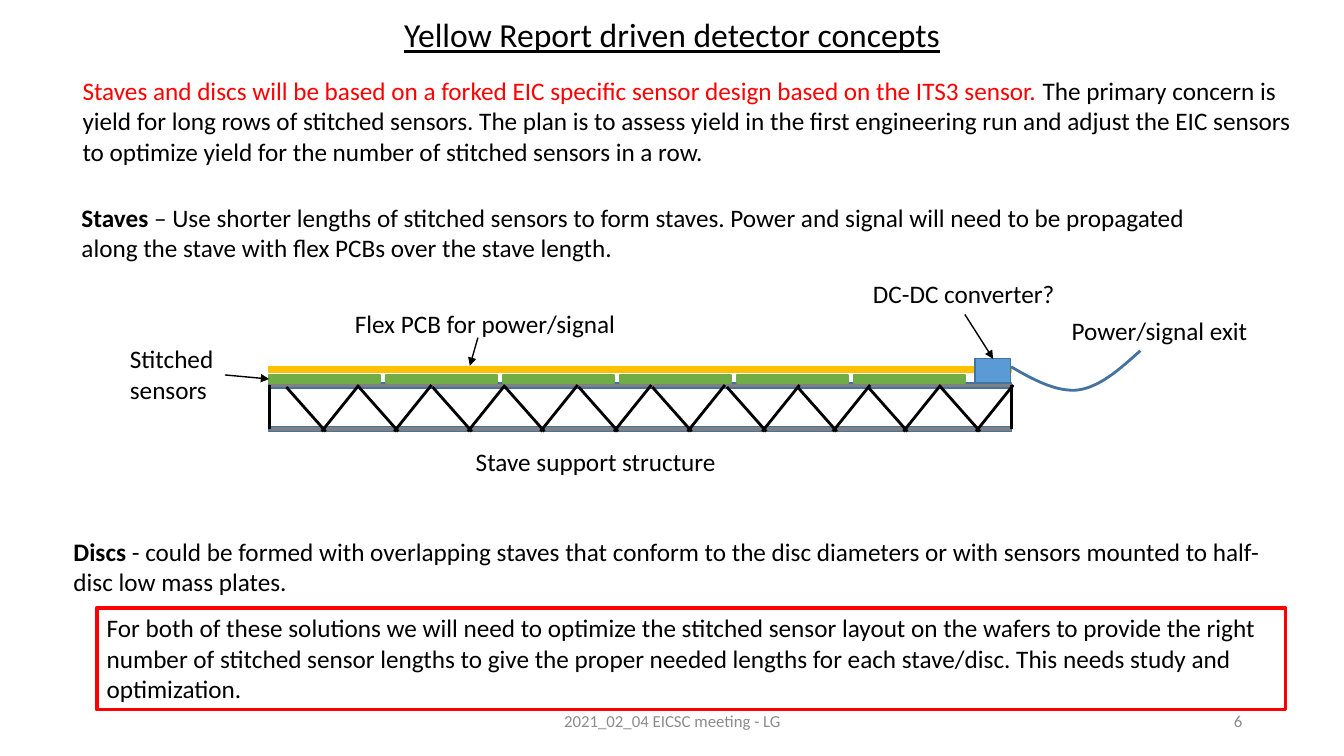
from lxml import etree
from pptx import Presentation
from pptx.dml.color import RGBColor
from pptx.enum.shapes import MSO_CONNECTOR, MSO_SHAPE
from pptx.enum.text import MSO_ANCHOR, MSO_AUTO_SIZE, PP_ALIGN
from pptx.oxml.ns import qn
from pptx.util import Inches, Pt

STRAIGHT, RECT = MSO_CONNECTOR.STRAIGHT, MSO_SHAPE.RECTANGLE
TOP, MIDDLE = MSO_ANCHOR.TOP, MSO_ANCHOR.MIDDLE
LEFT, CENTER, RIGHT = PP_ALIGN.LEFT, PP_ALIGN.CENTER, PP_ALIGN.RIGHT
BLACK = RGBColor(0x00, 0x00, 0x00)
RED = RGBColor(0xFF, 0x00, 0x00)
GRAY = RGBColor(0x80, 0x80, 0x80)
FOOTER_GRAY = RGBColor(0x8C, 0x8C, 0x8C)
BLUE = RGBColor(0x5B, 0x9B, 0xD5)
DARK_BLUE = RGBColor(0x43, 0x73, 0x9E)
GREEN = RGBColor(0x70, 0xAD, 0x47)
GOLD = RGBColor(0xFF, 0xC0, 0x00)

prs = Presentation()
prs.slide_width, prs.slide_height = Inches(13.33), Inches(7.5)
s = prs.slides.add_slide(prs.slide_layouts[5])


def write(sp, paragraphs, size=18, align=LEFT, anchor=TOP, wrap=True):
    """Fill a shape with paragraphs, each a list of (text, font values) runs."""
    tf = sp.text_frame
    tf.word_wrap, tf.vertical_anchor = wrap, anchor
    tf.auto_size = MSO_AUTO_SIZE.NONE
    for i, runs in enumerate(paragraphs):
        p = tf.paragraphs[0] if i == 0 else tf.add_paragraph()
        p.alignment = align
        for text, values in runs:
            r = p.add_run()
            r.text = text
            r.font.name, r.font.size = "Calibri", Pt(size)
            r.font.color.rgb = values.get("color", BLACK)
            for name in ("bold", "underline"):
                if name in values:
                    setattr(r.font, name, values[name])


def add_line(x1, y1, x2, y2, width=2, arrow=False):
    line = s.shapes.add_connector(STRAIGHT, *map(Inches, (x1, y1, x2, y2)))
    line.line.color.rgb, line.line.width = BLACK, Pt(width)
    sp_pr = line._element.spPr
    if arrow:
        etree.SubElement(sp_pr.find(qn("a:ln")), qn("a:tailEnd"), type="triangle")
    etree.SubElement(sp_pr, qn("a:effectLst"))


# Title
title = s.shapes.title
title.left, title.top, title.width, title.height = map(Inches, (3.88, 0.09, 5.57, 0.5))
write(title, [[("Yellow Report driven detector concepts", {"underline": True})]],
      size=24, align=CENTER, wrap=False)

# Body text
body = [
    ((0.72, 0.7, 12.28, 1.01), [
        ("Staves and discs will be based on a forked EIC specific sensor design "
         "based on the ITS3 sensor. ", {"color": RED}),
        ("The primary concern is yield for long rows of stitched sensors. The plan is to "
         "assess yield in the first engineering run and adjust the EIC sensors to optimize "
         "yield for the number of stitched sensors in a row.", {})]),
    ((0.71, 1.96, 11.7, 0.71), [
        ("Staves", {"bold": True}),
        (" – Use shorter lengths of stitched sensors to form staves. Power and signal will "
         "need to be propagated along the stave with flex PCBs over the stave length.", {})]),
    ((0.63, 5.27, 12.35, 1.01), [
        ("Discs", {"bold": True}),
        (" - could be formed with overlapping staves that conform to the disc diameters "
         "or with sensors mounted to half-disc low mass plates.", {})]),
]
for box, runs in body:
    write(s.shapes.add_textbox(*map(Inches, box)), [runs])

# Stave: rails, sensors, flex PCB and converter
STAVE_X, STAVE_W = 2.67, 7.36
STAVE_END = STAVE_X + STAVE_W
bars = [(STAVE_X, y, STAVE_W, 0.05, GRAY, DARK_BLUE) for y in (3.8, 4.23)]
bars += [(STAVE_X + 1.16 * i, 3.72, 1.1, 0.08, GREEN, GREEN) for i in range(6)]
bars += [(STAVE_X, 3.64, STAVE_W, 0.05, GOLD, GOLD),
         (9.67, 3.56, 0.35, 0.24, BLUE, DARK_BLUE)]
for x, y, w, h, fill, outline in bars:
    sp = s.shapes.add_shape(RECT, *map(Inches, (x, y, w, h)))
    sp.shadow.inherit = False
    sp.fill.solid()
    sp.fill.fore_color.rgb = fill
    sp.line.color.rgb, sp.line.width = outline, Pt(1)

# Truss: end posts and one V of struts to the left of each peak
for x in (STAVE_X, STAVE_END):
    add_line(x, 3.82, x, 4.26)
for peak in (3.56, 4.28, 5.01, 5.73, 6.46, 7.19, 7.93, 8.63, 9.33, 10.05):
    add_line(peak, 3.82, peak - 0.37, 4.28)
    add_line(peak - 0.72, 3.84, peak - 0.33, 4.28)

# Cable leaving the stave, sampled along two cubic curves
curves = [((10.03, 3.64), (10.25, 3.77), (10.48, 3.89), (10.69, 3.87)),
          ((10.69, 3.87), (10.91, 3.84), (11.11, 3.66), (11.31, 3.48))]
STEPS = 16
points = []
for curve in curves:
    for step in range(1, STEPS + 1):
        t = step / STEPS
        weights = ((1 - t) ** 3, 3 * t * (1 - t) ** 2, 3 * t ** 2 * (1 - t), t ** 3)
        points.append([Inches(sum(w * pt[axis] for w, pt in zip(weights, curve)))
                       for axis in (0, 1)])
builder = s.shapes.build_freeform(*map(Inches, curves[0][0]))
builder.add_line_segments(points, close=False)
cable = builder.convert_to_shape()
cable.shadow.inherit = False
cable.fill.background()
cable.line.color.rgb, cable.line.width = DARK_BLUE, Pt(2)

# Labels and their arrows
labels = [
    ((3.42, 3.01, 2.81, 0.4), ["Flex PCB for power/signal"]),
    ((1.19, 3.36, 1.04, 0.71), ["Stitched", "sensors"]),
    ((4.62, 4.38, 2.61, 0.4), ["Stave support structure"]),
    ((10.53, 3.08, 1.96, 0.4), ["Power/signal exit"]),
    ((8.56, 2.71, 2.02, 0.4), ["DC-DC converter?"]),
]
for box, lines in labels:
    write(s.shapes.add_textbox(*map(Inches, box)),
          [[(text, {})] for text in lines], wrap=False)
for ends in ((9.57, 3.12, 9.85, 3.56), (4.74, 3.35, 4.66, 3.63), (2.23, 3.72, 2.67, 3.76)):
    add_line(*ends, width=1, arrow=True)

# Conclusion
conclusion = s.shapes.add_shape(RECT, *map(Inches, (0.96, 6.03, 11.79, 1.01)))
conclusion.shadow.inherit = False
conclusion.fill.background()
conclusion.line.color.rgb, conclusion.line.width = RED, Pt(2.5)
write(conclusion, [[(
    "For both of these solutions we will need to optimize the stitched sensor layout on the "
    "wafers to provide the right number of stitched sensor lengths to give the proper needed "
    "lengths for each stave/disc. This needs study and optimization.", {})]])

# Footer
for x, w, text, align in ((4.42, 4.5, "2021_02_04 EICSC meeting - LG", CENTER),
                          (9.42, 3, "6", RIGHT)):
    write(s.shapes.add_textbox(*map(Inches, (x, 6.95, w, 0.4))),
          [[(text, {"color": FOOTER_GRAY})]], size=12, align=align, anchor=MIDDLE)

prs.save("out.pptx")
